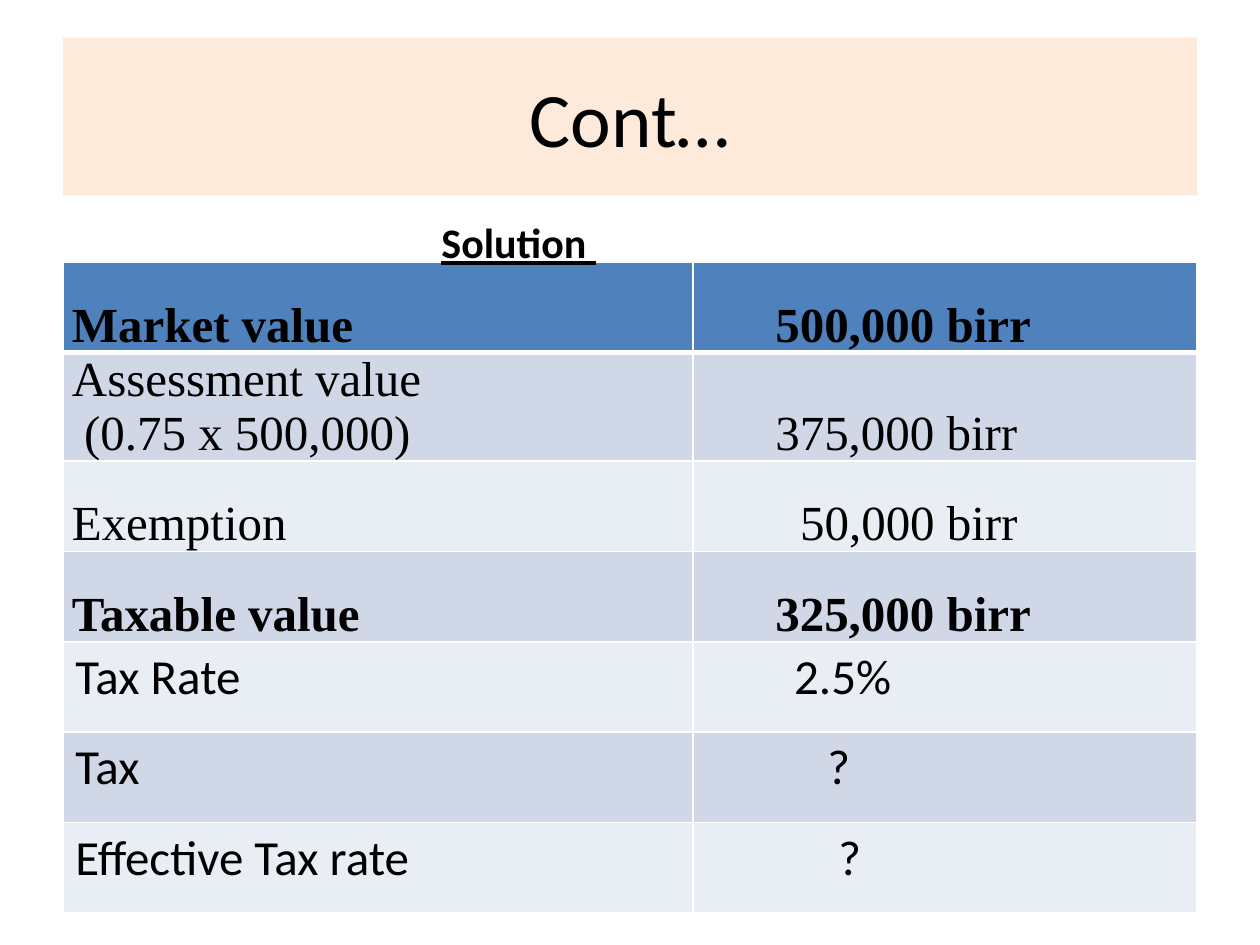
from lxml import etree
from pptx import Presentation
from pptx import util as u
from pptx.dml.color import RGBColor
from pptx.enum import shapes, text
from pptx.oxml.ns import qn

SERIF, SANS = "Times New Roman", "Calibri"
HEADER_FILL, BAND_FILLS = "4F81BD", ("D0D8E8", "E9EDF4")
SIDE = {SERIF: 0.18, SANS: 0.25}  # side margins of cells, in cm

# label, value, extra indent of the value in cm, font, bold
ROWS = [
    ("Market value", "500,000 birr", 1.48, SERIF, True),
    ("Assessment value\n (0.75 x 500,000)", "375,000 birr", 1.48, SERIF, False),
    ("Exemption", "50,000 birr", 1.98, SERIF, False),
    ("Taxable value", "325,000 birr", 1.48, SERIF, True),
    ("Tax Rate", "2.5%", 1.79, SANS, False),
    ("Tax", "?", 2.46, SANS, False),
    ("Effective Tax rate", "?", 2.68, SANS, False),
]


def color(value):
    return RGBColor.from_string(value)


def format_text(text_frame, size, font=SANS, bold=False):
    for paragraph in text_frame.paragraphs:
        for run in paragraph.runs:
            run.font.size = u.Pt(size)
            run.font.name = font
            run.font.bold = bold
            run.font.color.rgb = color("000000")


def add_title(slide, title):
    shape = slide.shapes.add_shape(
        shapes.MSO_SHAPE.RECTANGLE, u.Cm(1.27), u.Cm(0.76), u.Cm(22.86), u.Cm(3.18))
    shape.shadow.inherit = False
    shape.fill.solid()
    shape.fill.fore_color.rgb = color("FDEADA")
    shape.line.fill.background()
    text_frame = shape.text_frame
    text_frame.text = title
    text_frame.vertical_anchor = text.MSO_ANCHOR.MIDDLE
    text_frame.paragraphs[0].alignment = text.PP_ALIGN.CENTER
    format_text(text_frame, 44)


def add_subtitle(slide, subtitle):
    box = slide.shapes.add_textbox(u.Cm(8.46), u.Cm(4.24), u.Cm(7.82), u.Cm(1.27))
    text_frame = box.text_frame
    text_frame.word_wrap = True
    paragraph = text_frame.paragraphs[0]
    paragraph.add_run().text = " "
    run = paragraph.add_run()
    run.text = subtitle
    run.font.underline = True
    format_text(text_frame, 24, bold=True)


def set_borders(cell, bottom_width):
    properties = cell._tc.get_or_add_tcPr()
    for side, width in (("L", 1), ("R", 1), ("T", 1), ("B", bottom_width)):
        line = etree.SubElement(properties, qn(f"a:ln{side}"), w=str(u.Pt(width)))
        fill = etree.SubElement(line, qn("a:solidFill"))
        etree.SubElement(fill, qn("a:srgbClr"), val="FFFFFF")


def fill_cell(cell, content, indent, font, bold, fill, bottom_width):
    set_borders(cell, bottom_width)
    cell.fill.solid()
    cell.fill.fore_color.rgb = color(fill)
    cell.margin_left = u.Cm(SIDE[font] + indent)
    cell.margin_right = u.Cm(SIDE[font])
    if font == SERIF:
        cell.margin_top = cell.margin_bottom = 0
        cell.vertical_anchor = text.MSO_ANCHOR.BOTTOM
    cell.text_frame.text = content
    format_text(cell.text_frame, 28, font, bold)


def add_tax_table(slide):
    row_height = u.Cm(1.82)
    table = slide.shapes.add_table(
        len(ROWS), 2, u.Cm(1.27), u.Cm(5.29), u.Cm(22.86), row_height * len(ROWS)).table
    table.columns[0].width = u.Cm(12.7)
    table.columns[1].width = u.Cm(10.16)
    for index, (label, value, indent, font, bold) in enumerate(ROWS):
        table.rows[index].height = row_height
        fill = BAND_FILLS[(index - 1) % 2] if index else HEADER_FILL
        bottom_width = 1 if index else 3
        for column, (content, shift) in enumerate(((label, 0), (value, indent))):
            fill_cell(table.cell(index, column), content, shift, font, bold,
                      fill, bottom_width)


def main():
    presentation = Presentation()
    presentation.slide_width, presentation.slide_height = u.Cm(25.4), u.Cm(19.05)
    slide = presentation.slides.add_slide(presentation.slide_layouts[6])

    # Heading band
    add_title(slide, "Cont…")
    # Tax calculation
    add_tax_table(slide)
    add_subtitle(slide, "Solution ")

    presentation.save("out.pptx")


if __name__ == "__main__":
    main()
